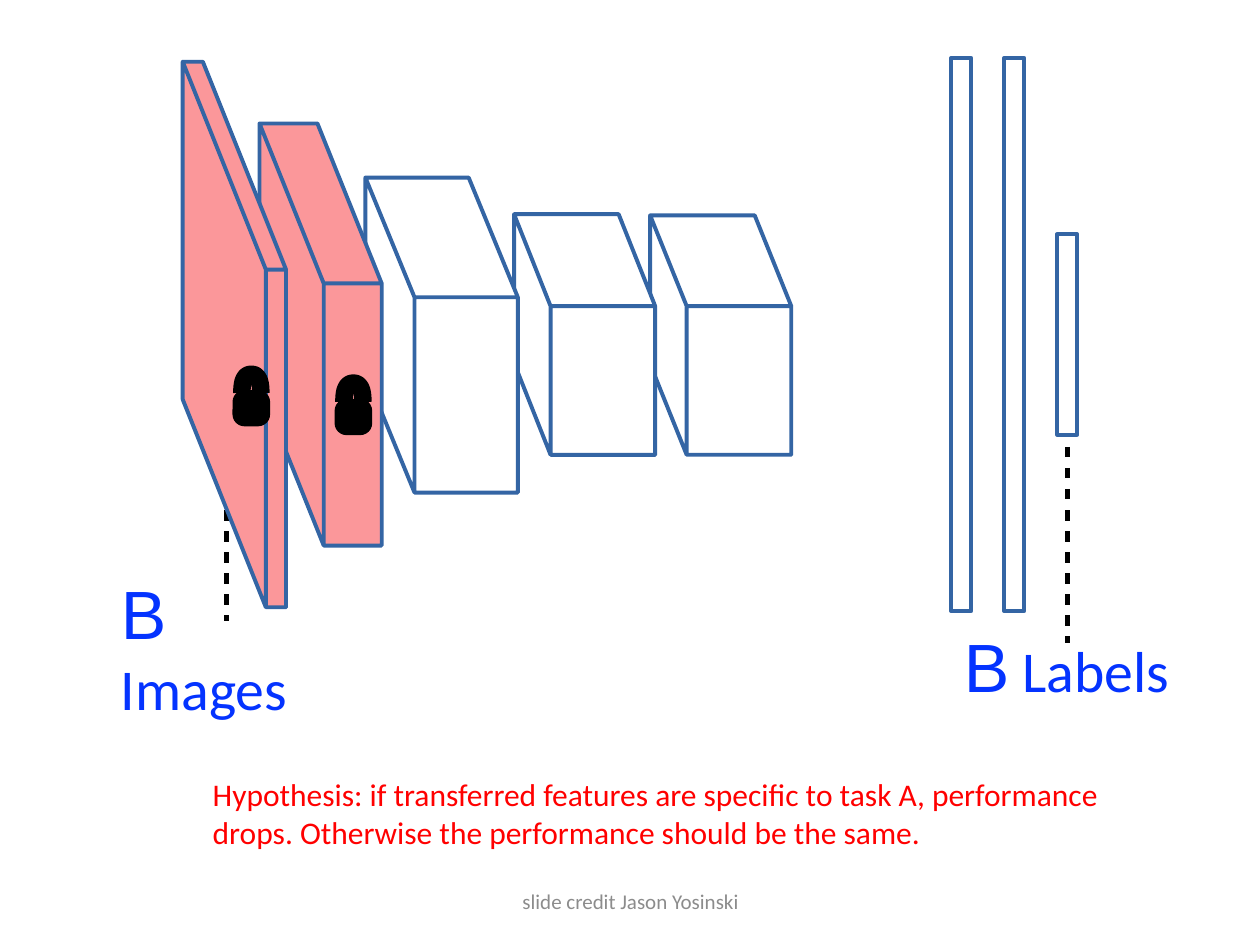
from lxml import etree
from pptx import Presentation
from pptx.dml.color import RGBColor
from pptx.enum import shapes, text
from pptx.oxml.ns import qn
from pptx.util import Inches, Pt

BLUE, PINK, WHITE, BLACK = "3465A4", "FB979A", "FFFFFF", "000000"
OUTLINE = 2.25

# Conv layers, back to front: left, top, slant x, slant y, width, height, fill
LAYERS = [
    (5.16, 1.71, 0.29, 0.72, 0.83, 1.18, WHITE),
    (4.08, 1.7, 0.29, 0.73, 0.83, 1.18, WHITE),
    (2.9, 1.41, 0.39, 0.95, 0.82, 1.55, WHITE),
    (2.06, 0.98, 0.51, 1.27, 0.46, 2.08, PINK),
    (1.45, 0.49, 0.66, 1.65, 0.16, 2.68, PINK),
]
# Fully connected layers: top, height
BARS = [(0.46, 4.39), (0.46, 4.39), (1.86, 1.59)]
BAR_LEFT, BAR_STEP, BAR_WIDTH = 7.55, 0.42, 0.16
LOCKS = [(1.86, 3.11), (2.67, 3.18)]
DASHES = [(1.8, 4.05, 4.93), (8.47, 3.38, 5.1)]  # x, top, bottom
LABELS = [(0.9, 4.74, 1.9, " Images"), (7.59, 4.89, 1.77, " Labels")]
HYPOTHESIS = ("Hypothesis: if transferred features are specific to task A, "
              "performance drops. Otherwise the performance should be the same.")
CREDIT = "slide credit Jason Yosinski"

prs = Presentation()
prs.slide_width, prs.slide_height = Inches(10), Inches(7.5)
s = prs.slides.add_slide(prs.slide_layouts[6])


def rgb(color):
    return RGBColor.from_string(color)


def style(sp, fill, line, width):
    sp.shadow.inherit = False
    if fill:
        sp.fill.solid()
        sp.fill.fore_color.rgb = rgb(fill)
    else:
        sp.fill.background()
    sp.line.color.rgb = rgb(line)
    sp.line.width = Pt(width)


def add_box(kind, box, fill, line, width):
    sp = s.shapes.add_shape(kind, *map(Inches, box))
    style(sp, fill, line, width)
    return sp


def add_path(points, close, fill, line, width):
    pts = [(Inches(x), Inches(y)) for x, y in points]
    builder = s.shapes.build_freeform(*pts[0], scale=1.0)
    builder.add_line_segments(pts[1:], close=close)
    style(builder.convert_to_shape(), fill, line, width)


def add_text(box, runs, anchor, align=text.PP_ALIGN.LEFT, inset=None, wrap=True):
    """Add one paragraph; runs are (words, size, font, color)."""
    tf = s.shapes.add_textbox(*map(Inches, box)).text_frame
    tf.word_wrap = wrap
    tf.vertical_anchor = anchor
    if inset is not None:
        tf.margin_left = tf.margin_right = Inches(inset)
        tf.margin_top = tf.margin_bottom = Inches(inset)
    p = tf.paragraphs[0]
    p.alignment = align
    for words, size, font, color in runs:
        r = p.add_run()
        r.text = words
        r.font.size, r.font.name = Pt(size), font
        r.font.color.rgb = rgb(color)


def add_dashed_line(x, top, bottom):
    c = s.shapes.add_connector(shapes.MSO_CONNECTOR.STRAIGHT,
                               Inches(x), Inches(top), Inches(x), Inches(bottom))
    c.line.color.rgb = rgb(BLACK)
    c.line.width = Pt(3)
    dash = etree.SubElement(c.line._get_or_add_ln(), qn("a:custDash"))
    etree.SubElement(dash, qn("a:ds"), d="200000", sp="200000")
    etree.SubElement(c._element.spPr, qn("a:effectLst"))


def add_layer(x, y, dx, dy, w, h, fill):
    """Draw a slanted block: left side, top and front in one path."""
    back_top, back_low, back_right = (x, y), (x, y + h), (x + w, y)
    top, low = (x + dx, y + dy), (x + dx, y + dy + h)
    right, right_low = (x + dx + w, y + dy), (x + dx + w, y + dy + h)
    add_path([top, low, back_low, back_top, top, back_top, back_right,
              right, top, right, right_low, low, top], True, fill, BLUE, OUTLINE)


def add_lock(x, y):
    body = add_box(shapes.MSO_SHAPE.ROUNDED_RECTANGLE, (x, y, 0.27, 0.26),
                   BLACK, BLACK, 2)
    body.adjustments[0] = 0.31
    # Left half of the shackle is a cubic curve; the right half mirrors it
    left, base, half, rise, steps = x + 0.06, y + 0.01, 0.075, 0.15, 10
    curve = []
    for i in range(steps + 1):
        t = i / steps
        curve.append((half * t ** 3,
                      0.3 * rise * 3 * t * (1 - t) ** 2
                      + rise * (3 * t ** 2 * (1 - t) + t ** 3)))
    arch = curve + [(2 * half - dx, dy) for dx, dy in curve[-2::-1]]
    add_path([(left + dx, base - dy) for dx, dy in arch], False, None, BLACK, 10)


for dash in DASHES:
    add_dashed_line(*dash)
for x, y, w, word in LABELS:
    add_text((x, y, w, 0.78), [("B", 39, "Arial", "0433FF"), (word, 33, "Calibri", "0433FF")],
             text.MSO_ANCHOR.MIDDLE, inset=0.06, wrap=False)
for i, (top, height) in enumerate(BARS):
    add_box(shapes.MSO_SHAPE.RECTANGLE, (BAR_LEFT + i * BAR_STEP, top, BAR_WIDTH, height),
            WHITE, BLUE, OUTLINE)
for layer in LAYERS:
    add_layer(*layer)
for lock in LOCKS:
    add_lock(*lock)
add_text((3.42, 6.95, 3.17, 0.4), [(CREDIT, 12, "Calibri", "8C8C8C")],
         text.MSO_ANCHOR.MIDDLE, text.PP_ALIGN.CENTER)
add_text((1.59, 6.1, 7.46, 0.71), [(HYPOTHESIS, 18, "Calibri", "FF0000")],
         text.MSO_ANCHOR.TOP)

prs.save("out.pptx")
